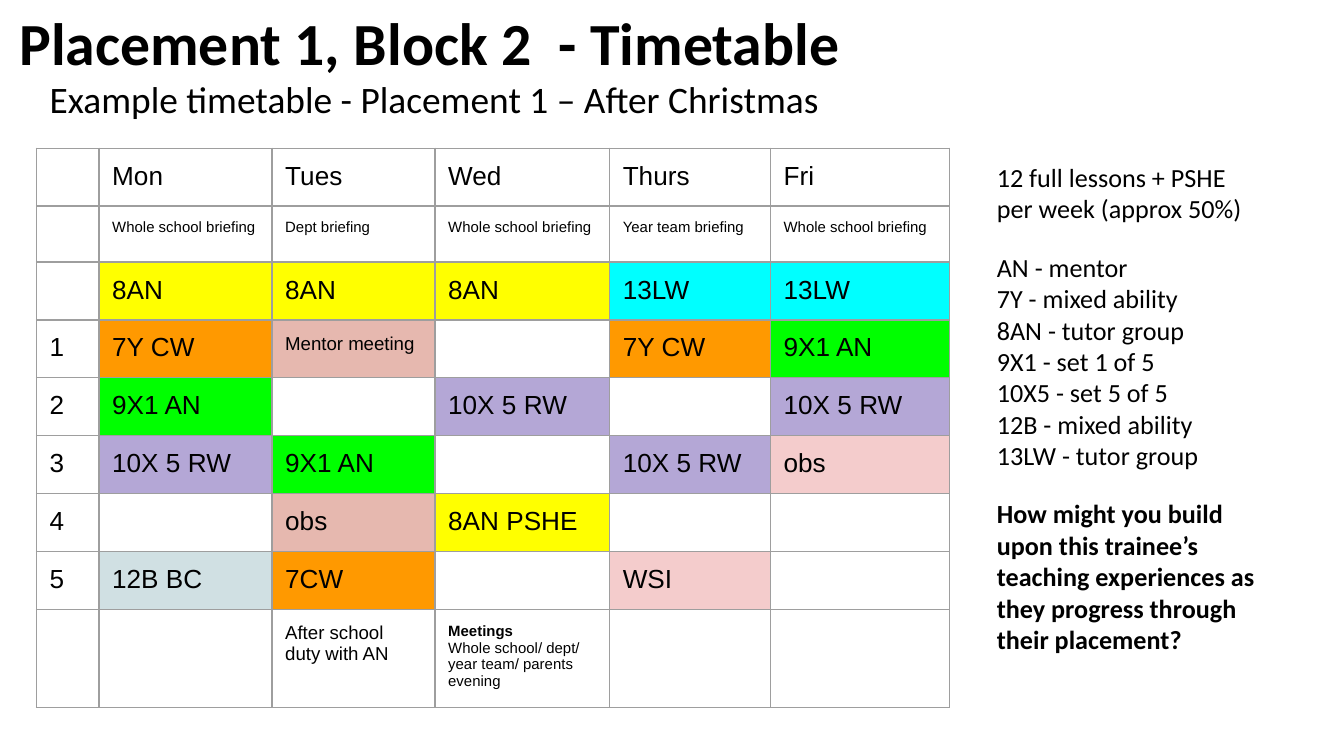
import pptx
import pptx.dml.color
import pptx.enum.text
import pptx.oxml
import pptx.oxml.ns
import pptx.util

Cm, Pt = pptx.util.Cm, pptx.util.Pt
MIDDLE = pptx.enum.text.MSO_ANCHOR.MIDDLE

COLORS = {
    "text": "000000", "border": "9E9E9E", "white": "FFFFFF",
    "yellow": "FFFF00", "cyan": "00FFFF", "orange": "FF9900",
    "green": "00FF00", "purple": "B4A7D6", "rose": "E6B8AF",
    "pink": "F4CCCC", "grey": "D0E0E3",
}

TITLE = "Placement 1, Block 2  - Timetable"
SUBTITLE = "Example timetable - Placement 1 – After Christmas"

# Each cell: lines of text, fill, size in points
EMPTY = ("", None, 14)
BLANK = ("", "white", 14)


def plain(text):
    return (text, None, 14)


def small(text):
    return (text, None, 8)


TUTOR = ("8AN", "yellow", 14)
SIXTH = ("13LW", "cyan", 14)
YEAR_7 = ("7Y CW", "orange", 14)
YEAR_9 = ("9X1 AN", "green", 14)
YEAR_10 = ("10X 5 RW", "purple", 14)
MEETINGS = "Meetings\nWhole school/ dept/ year team/ parents evening"

TIMETABLE = [
    [EMPTY] + [plain(day) for day in ("Mon", "Tues", "Wed", "Thurs", "Fri")],
    [EMPTY, small("Whole school briefing"), small("Dept briefing"),
     small("Whole school briefing"), small("Year team briefing"),
     small("Whole school briefing")],
    [EMPTY, TUTOR, TUTOR, TUTOR, SIXTH, SIXTH],
    [plain("1"), YEAR_7, ("Mentor meeting", "rose", 10), EMPTY, YEAR_7, YEAR_9],
    [plain("2"), YEAR_9, EMPTY, YEAR_10, EMPTY, YEAR_10],
    [plain("3"), YEAR_10, YEAR_9, EMPTY, YEAR_10, ("obs", "pink", 14)],
    [plain("4"), EMPTY, ("obs", "rose", 14), ("8AN PSHE", "yellow", 14),
     EMPTY, EMPTY],
    [plain("5"), ("12B BC", "grey", 14), ("7CW", "orange", 14), EMPTY,
     ("WSI", "pink", 14), EMPTY],
    [EMPTY, BLANK, ("After school duty with AN", "white", 10),
     (MEETINGS, "white", 8), BLANK, BLANK],
]
COL_WIDTHS = [1.18, 3.27, 3.08, 3.3, 3.04, 3.38]
ROW_HEIGHTS = [1.06] * 8 + [1.78]

NOTES = [
    ["12 full lessons + PSHE per week (approx 50%)"],
    ["AN - mentor", "7Y - mixed ability", "8AN - tutor group",
     "9X1 - set 1 of 5", "10X5 - set 5 of 5", "12B - mixed ability",
     "13LW - tutor group"],
    ["How might you build upon this trainee’s teaching experiences "
     "as they progress through their placement?"],
]


def rgb(name):
    return pptx.dml.color.RGBColor.from_string(COLORS[name])


def add_run(p, text, size, font, bold=False):
    r = p.add_run()
    r.text = text
    r.font.size = Pt(size)
    r.font.name = font
    r.font.bold = bold
    r.font.color.rgb = rgb("text")


def next_paragraph(tf, index):
    return tf.paragraphs[0] if index == 0 else tf.add_paragraph()


def add_box(s, left, top, width, height, inset_x=0.25, inset_y=0.25):
    tf = s.shapes.add_textbox(Cm(left), Cm(top), Cm(width), Cm(height)).text_frame
    tf.word_wrap = True
    tf.margin_left = tf.margin_right = Cm(inset_x)
    tf.margin_top = tf.margin_bottom = Cm(inset_y)
    return tf


def add_borders(cell):
    tc_pr = cell._tc.get_or_add_tcPr()
    for side in "LRTB":
        tc_pr.append(pptx.oxml.parse_xml(
            f'<a:ln{side} {pptx.oxml.ns.nsdecls("a")} w="9525"><a:solidFill>'
            f'<a:srgbClr val="{COLORS["border"]}"/></a:solidFill></a:ln{side}>'))


def fill_cell(cell, text, fill, size):
    add_borders(cell)
    if fill:
        cell.fill.solid()
        cell.fill.fore_color.rgb = rgb(fill)
    else:
        cell.fill.background()
    if not text:
        return
    cell.margin_left = cell.margin_right = Cm(0.25)
    cell.margin_top = cell.margin_bottom = Cm(0.25)
    for i, line in enumerate(text.split("\n")):
        add_run(next_paragraph(cell.text_frame, i), line, size, "Arial",
                bold=line == "Meetings")


def add_timetable(s):
    table = s.shapes.add_table(
        len(ROW_HEIGHTS), len(COL_WIDTHS), Cm(0.69), Cm(2.8),
        Cm(sum(COL_WIDTHS)), Cm(sum(ROW_HEIGHTS))).table
    table.first_row = table.horz_banding = False
    for column, width in zip(table.columns, COL_WIDTHS):
        column.width = Cm(width)
    for row, height, entries in zip(table.rows, ROW_HEIGHTS, TIMETABLE):
        row.height = Cm(height)
        for cell, entry in zip(row.cells, entries):
            fill_cell(cell, *entry)


def add_notes(s):
    tf = add_box(s, 18.59, 2.8, 5.44, 1.4)
    lines = [(g, i, line) for g, group in enumerate(NOTES)
             for i, line in enumerate(group)]
    for n, (g, i, line) in enumerate(lines):
        p = next_paragraph(tf, n)
        if n and i == 0:
            p.space_before = Pt(14.5)
        add_run(p, line, 14, "Calibri", bold=g == len(NOTES) - 1)


def main():
    prs = pptx.Presentation()
    prs.slide_width, prs.slide_height = Cm(25.4), Cm(14.29)
    s = prs.slides.add_slide(prs.slide_layouts[6])

    tf = add_box(s, 0.18, -0.41, 22.86, 2.39, 0.19, 0.1)
    tf.vertical_anchor = MIDDLE
    add_run(tf.paragraphs[0], TITLE, 32, "Calibri", bold=True)
    tf = add_box(s, 0.69, 1.19, 15.95, 1.32)
    add_run(tf.paragraphs[0], SUBTITLE, 20, "Calibri")

    add_timetable(s)
    add_notes(s)
    prs.save("out.pptx")


if __name__ == "__main__":
    main()
